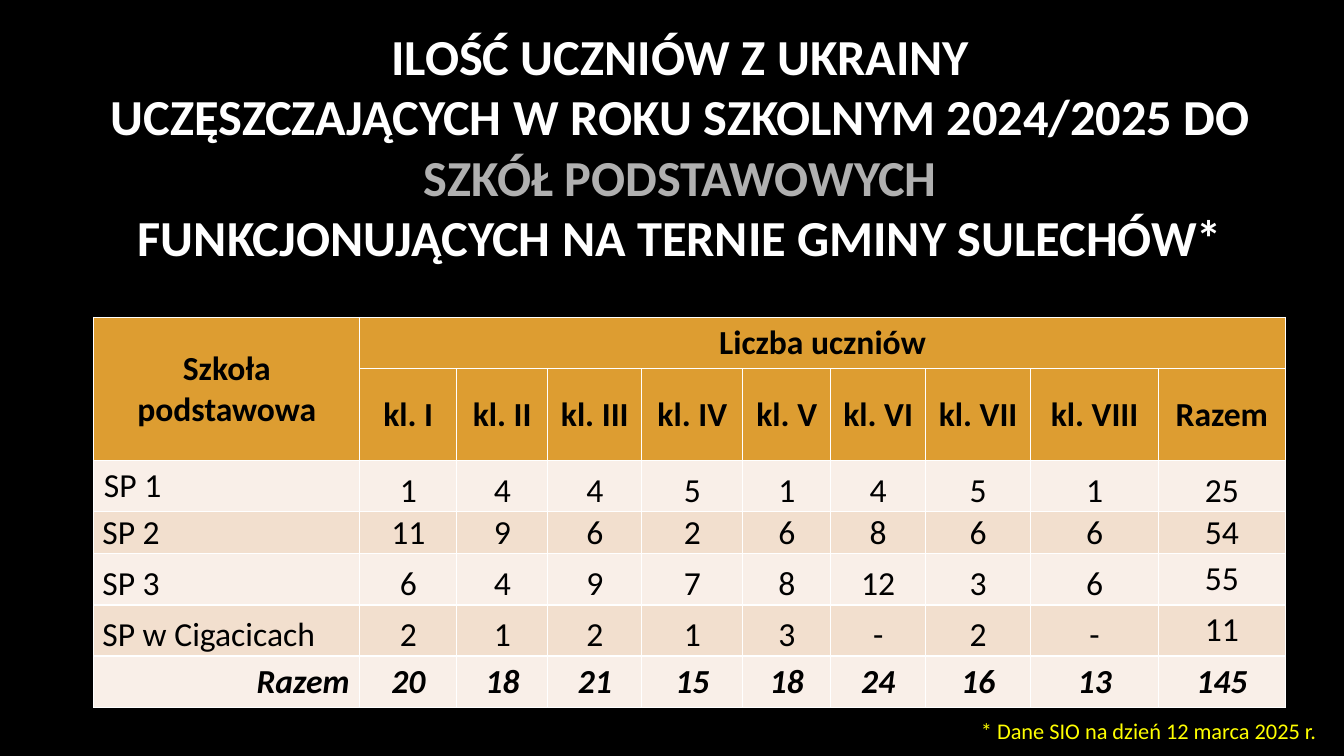
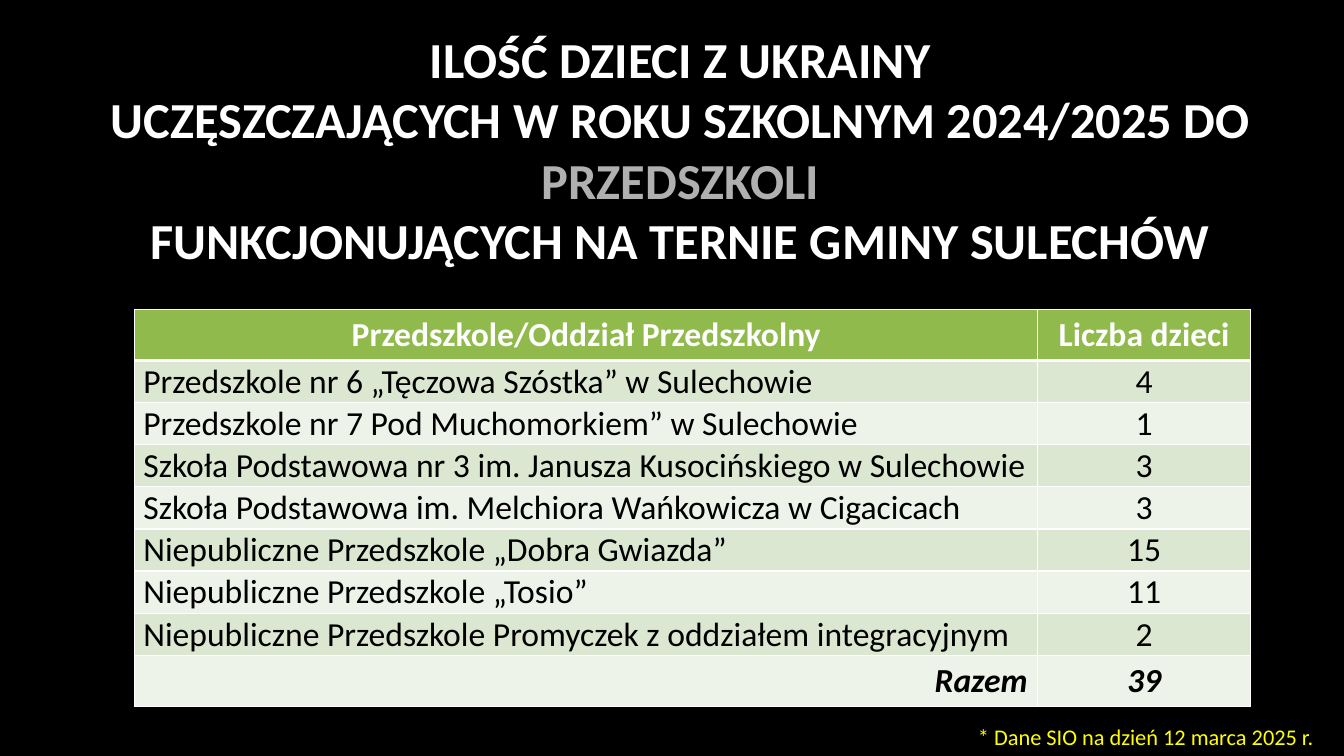
from pptx import Presentation
from pptx.dml.color import RGBColor
from pptx.enum import text
from pptx.oxml import parse_xml
from pptx.oxml.ns import nsdecls
from pptx.util import Pt

FONT = "Calibri"
BLACK, WHITE, GREY, YELLOW = "000000", "FFFFFF", "B0B0B0", "FFFF00"
LEFT, MID, RIGHT = (text.PP_ALIGN.LEFT, text.PP_ALIGN.CENTER,
                    text.PP_ALIGN.RIGHT)
ANCHOR = text.MSO_ANCHOR

# Content: "loose" cells keep the full padding and are centred vertically
NOTE = "* Dane SIO na dzień 12 marca 2025 r."
TITLE = [  # words, colour, line break after
    ("ILOŚĆ {who} Z UKRAINY", WHITE, True),
    ("UCZĘSZCZAJĄCYCH W ROKU SZKOLNYM 2024/2025 DO ", WHITE, False),
    ("{place}", GREY, True),
    ("FUNKCJONUJĄCYCH NA TERNIE GMINY SULECHÓW{mark}", WHITE, False),
]

SCHOOLS = {
    "words": {"who": "UCZNIÓW", "place": "SZKÓŁ PODSTAWOWYCH", "mark": "*"},
    "title": (67, 13.7, 838, 180.7),
    "note": (663.8, 509, 283.7, 26),
    "table": (67, 226.8),
    "cols": [190, 69.3, 65, 67.2, 72.1, 62.9, 67.7, 75.2, 91.2, 90.6],
    "heights": [36, 65.5, 36.4, 30, 36.4, 36.4, 36.6],
    "rows": [
        ["Szkoła podstawowa", "Liczba uczniów"] + [""] * 8,
        ["", "kl. I", "kl. II", "kl. III", "kl. IV", "kl. V", "kl. VI",
         "kl. VII", "kl. VIII", "Razem"],
        ["SP 1", 1, 4, 4, 5, 1, 4, 5, 1, 25],
        ["SP 2", 11, 9, 6, 2, 6, 8, 6, 6, 54],
        ["SP 3", 6, 4, 9, 7, 8, 12, 3, 6, 55],
        ["SP w Cigacicach", 2, 1, 2, 1, 3, "-", 2, "-", 11],
        ["Razem", 20, 18, 21, 15, 18, 24, 16, 13, 145],
    ],
    "heads": 2,
    "spans": [((0, 0), (1, 0)), ((0, 1), (0, 9))],
    "loose": {(2, 0), (4, 9), (5, 9), (6, 9)},
    "anchor": ANCHOR.BOTTOM,
    "head": ("DD9D31", BLACK),
    "bands": ("F9EFE8", "F2DFCE"),
    "rule": 1,
}

NURSERIES = {
    "words": {"who": "DZIECI", "place": "PRZEDSZKOLI", "mark": ""},
    "title": (67, 18, 838, 176.4),
    "note": (661.7, 513, 283.7, 26),
    "table": (96.3, 221),
    "cols": [645, 152],
    "heights": [36.4] + [30.1] * 7 + [36.4],
    "rows": [
        ["Przedszkole/Oddział Przedszkolny", "Liczba dzieci"],
        ["Przedszkole nr 6 „Tęczowa Szóstka” w Sulechowie", 4],
        ["Przedszkole nr 7 Pod Muchomorkiem” w Sulechowie", 1],
        ["Szkoła Podstawowa nr 3 im. Janusza Kusocińskiego w Sulechowie", 3],
        ["Szkoła Podstawowa im. Melchiora Wańkowicza w Cigacicach", 3],
        ["Niepubliczne Przedszkole „Dobra Gwiazda”", 15],
        ["Niepubliczne Przedszkole „Tosio”", 11],
        ["Niepubliczne Przedszkole Promyczek z oddziałem integracyjnym", 2],
        ["Razem", 39],
    ],
    "heads": 1,
    "spans": [],
    "loose": set(),
    "anchor": ANCHOR.MIDDLE,
    "head": ("90BA4C", WHITE),
    "bands": ("DBE7D0", "EEF3E9"),
    "rule": 3,
}


# Formatting helpers
def rgb(code):
    return RGBColor.from_string(code)


def assign(item, values):
    for key, value in values.items():
        setattr(item, key, value)


def add_run(para, words, color, size, bold=False, italic=False):
    run = para.add_run()
    run.text = words
    assign(run.font, {"name": FONT, "size": Pt(size), "bold": bold,
                      "italic": italic})
    run.font.color.rgb = rgb(color)


def add_lines(cell, top, bottom):
    props = cell._tc.get_or_add_tcPr()
    for side, width in zip("LRTB", (1, 1, top, bottom)):
        props.append(parse_xml(
            f'<a:ln{side} {nsdecls("a")} w="{Pt(width)}"><a:solidFill>'
            f'<a:srgbClr val="{WHITE}"/></a:solidFill></a:ln{side}>'))


def place(shape, box):
    assign(shape, dict(zip(("left", "top", "width", "height"),
                           map(Pt, box))))


# Slide parts
def add_title(slide, data):
    title = slide.shapes.title
    place(title, data["title"])
    frame = title.text_frame
    assign(frame, {"word_wrap": True, "vertical_anchor": ANCHOR.MIDDLE,
                   "auto_size": text.MSO_AUTO_SIZE.NONE})
    para = frame.paragraphs[0]
    para.alignment = MID
    para.font.size = Pt(36)
    for words, color, ends in TITLE:
        add_run(para, words.format(**data["words"]), color, 36, bold=True)
        if ends:
            para.add_line_break()


def fill_cell(cell, row, col, data):
    heads, last = data["heads"], len(data["rows"]) - 1
    head, total = row < heads, row == last
    loose = head or (total and col == 0) or (row, col) in data["loose"]

    # Borders, with a thicker rule under the header
    add_lines(cell, data["rule"] if row == heads else 1,
              data["rule"] if row == heads - 1 else 1)
    fill, color = data["head"] if head else (
        data["bands"][(row - heads) % 2], BLACK)
    cell.fill.solid()
    cell.fill.fore_color.rgb = rgb(fill)

    # Padding and anchor
    if not loose:
        assign(cell, {"margin_left": Pt(6.1 if col == 0 else 0.7),
                      "margin_right": Pt(0.7), "margin_top": Pt(0.7),
                      "margin_bottom": 0})
    cell.vertical_anchor = (ANCHOR.MIDDLE if loose or total
                            else data["anchor"])

    # Text
    words = str(data["rows"][row][col])
    if words:
        para = cell.text_frame.paragraphs[0]
        para.alignment = (MID if head or col else RIGHT if total else LEFT)
        add_run(para, words, color, 24, bold=head or total, italic=total)


def add_grid(slide, data):
    cols, heights = data["cols"], data["heights"]
    box = (*data["table"], sum(cols), sum(heights))
    grid = slide.shapes.add_table(len(heights), len(cols),
                                  *map(Pt, box)).table
    assign(grid, {"first_row": False, "horz_banding": False})
    for col, width in zip(grid.columns, cols):
        col.width = Pt(width)
    for row, height in zip(grid.rows, heights):
        row.height = Pt(height)
    for start, end in data["spans"]:
        grid.cell(*start).merge(grid.cell(*end))
    for row in range(len(heights)):
        for col in range(len(cols)):
            fill_cell(grid.cell(row, col), row, col, data)


def add_note(slide, data):
    frame = slide.shapes.add_textbox(*map(Pt, data["note"])).text_frame
    frame.word_wrap = True
    para = frame.paragraphs[0]
    para.alignment = RIGHT
    add_run(para, NOTE, YELLOW, 16)


def main():
    deck = Presentation()
    assign(deck, {"slide_width": Pt(960), "slide_height": Pt(540)})
    back = deck.slide_master.background.fill
    back.solid()
    back.fore_color.rgb = rgb(BLACK)
    for data in (SCHOOLS, NURSERIES):
        slide = deck.slides.add_slide(deck.slide_layouts[5])
        for add in (add_title, add_grid, add_note):
            add(slide, data)
    deck.save("out.pptx")


if __name__ == "__main__":
    main()
